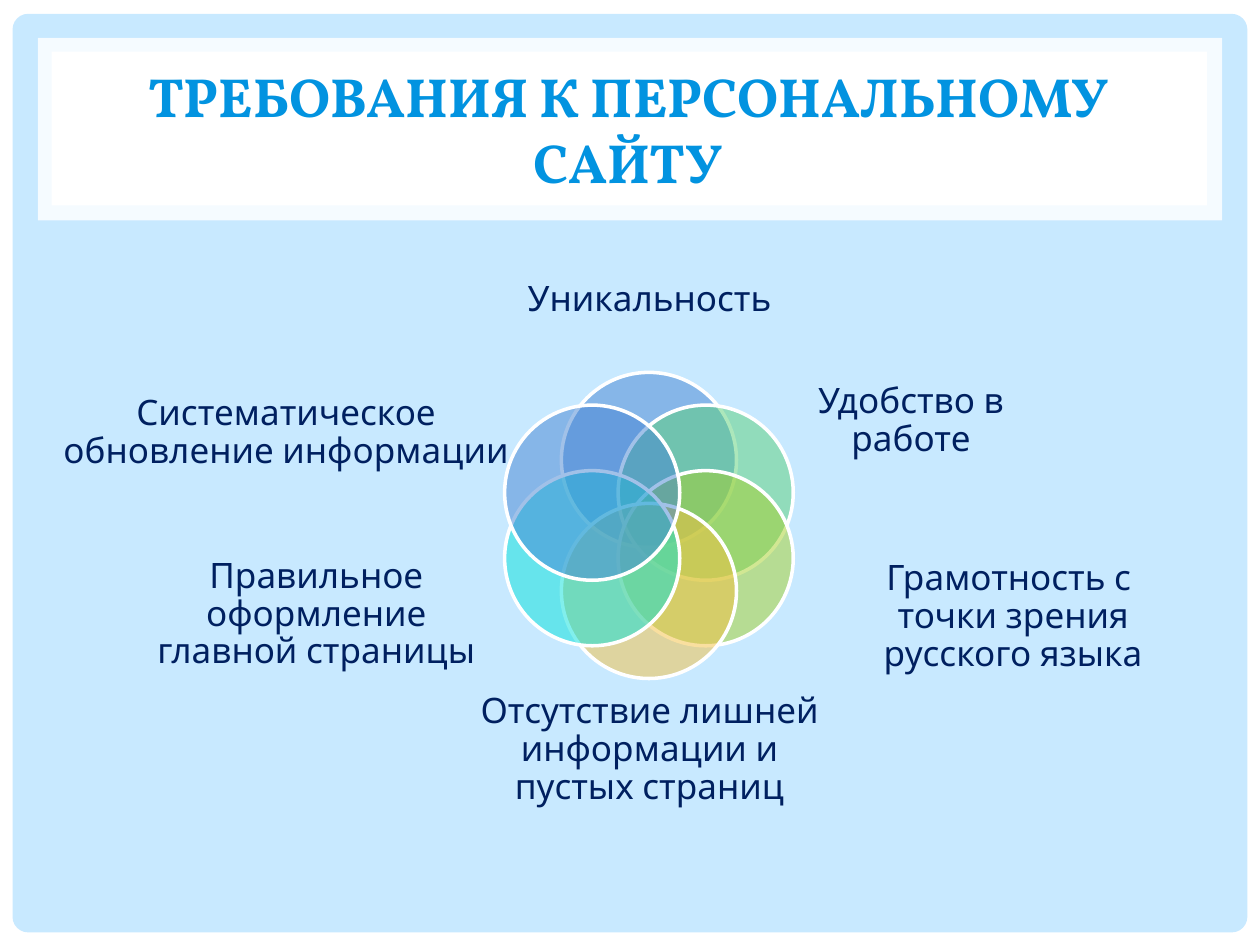
from math import cos, radians, sin

from lxml import etree
from pptx import Presentation
from pptx.dml.color import RGBColor
from pptx.enum.shapes import MSO_SHAPE
from pptx.enum.text import MSO_ANCHOR, PP_ALIGN
from pptx.oxml.ns import qn
from pptx.util import Inches, Pt

RECTANGLE = MSO_SHAPE.RECTANGLE
ROUNDED = MSO_SHAPE.ROUNDED_RECTANGLE
OVAL = MSO_SHAPE.OVAL
MIDDLE = MSO_ANCHOR.MIDDLE
CENTER = PP_ALIGN.CENTER

WHITE = "FFFFFF"
SKY = "C8E9FF"
TITLE_BLUE = "0293E0"
NAVY = "002060"

FLOWER_X, FLOWER_Y = 5.15, 4.17
ORBIT = 0.52
DIAMETER = 1.39

# Clockwise from the top: circle colour, label, label box
REQUIREMENTS = [
    ("4584D3", "Уникальность", (3.81, 1.96, 2.69, 0.85)),
    ("5BD078", "Удобство в работе", (6.18, 2.82, 2.1, 1.04)),
    ("A5D028", "Грамотность с \vточки зрения русского языка", (6.58, 4.32, 2.92, 1.16)),
    ("F5C040", "Отсутствие лишней информации и пустых страниц", (3.76, 5.48, 2.79, 0.95)),
    ("05E0DB", "Правильное оформление главной страницы", (1.22, 4.3, 2.58, 1.16)),
    ("4584D3", "Систематическое обновление информации ", (0.5, 2.86, 3.54, 1.16)),
]


def color(value):
    return RGBColor.from_string(value)


def add_filled_shape(slide, kind, bounds, fill, opacity=100):
    shape = slide.shapes.add_shape(kind, *map(Inches, bounds))
    shape.shadow.inherit = False
    shape.fill.solid()
    shape.fill.fore_color.rgb = color(fill)
    shape.line.fill.background()
    if opacity < 100:
        solid = shape.fill._xPr.find(qn("a:solidFill"))
        etree.SubElement(solid[0], qn("a:alpha")).set("val", str(opacity * 1000))
    return shape


def add_text(slide, bounds, text, font, size, text_color, bold=False):
    box = slide.shapes.add_textbox(*map(Inches, bounds))
    frame = box.text_frame
    frame.word_wrap = True
    frame.vertical_anchor = MIDDLE
    frame.text = text
    para = frame.paragraphs[0]
    para.alignment = CENTER
    for span in para.runs:
        span.font.name = font
        span.font.size = Pt(size)
        span.font.bold = bold
        span.font.color.rgb = color(text_color)
    return frame


def add_frame(slide):
    panel = add_filled_shape(slide, ROUNDED, (0.1, 0.11, 9.8, 7.29), SKY)
    panel.adjustments[0] = 0.017
    add_filled_shape(slide, RECTANGLE, (0.3, 0.3, 9.4, 1.45), WHITE, 83)
    add_filled_shape(slide, RECTANGLE, (0.41, 0.41, 9.17, 1.22), WHITE)


def add_circle(slide, angle, fill):
    """Place one circle of the flower, angle in degrees clockwise from the top."""
    left = FLOWER_X + ORBIT * sin(radians(angle)) - DIAMETER / 2
    top = FLOWER_Y - ORBIT * cos(radians(angle)) - DIAMETER / 2
    circle = add_filled_shape(slide, OVAL, (left, top, DIAMETER, DIAMETER), fill, 50)
    circle.line.color.rgb = color(WHITE)
    circle.line.width = Pt(2)


def add_label(slide, bounds, text):
    frame = add_text(slide, bounds, text, "League Spartan", 20, NAVY)
    frame.margin_left = frame.margin_right = 0
    frame.margin_top = frame.margin_bottom = 0
    para = frame.paragraphs[0]
    para.line_spacing = 0.9
    para.space_after = Pt(7)


def main():
    deck = Presentation()
    deck.slide_width, deck.slide_height = Inches(10), Inches(7.5)
    page = deck.slides.add_slide(deck.slide_layouts[6])
    page.background.fill.solid()
    page.background.fill.fore_color.rgb = color(WHITE)
    add_frame(page)
    add_text(page, (0.47, 0.45, 9.03, 1.14), "ТРЕБОВАНИЯ К ПЕРСОНАЛЬНОМУ САЙТУ",
             "Vollkorn", 31.5, TITLE_BLUE, bold=True)
    step = 360 / len(REQUIREMENTS)
    for index, (fill, text, bounds) in enumerate(REQUIREMENTS):
        add_circle(page, index * step, fill)
        add_label(page, bounds, text)
    deck.save("out.pptx")


if __name__ == "__main__":
    main()
